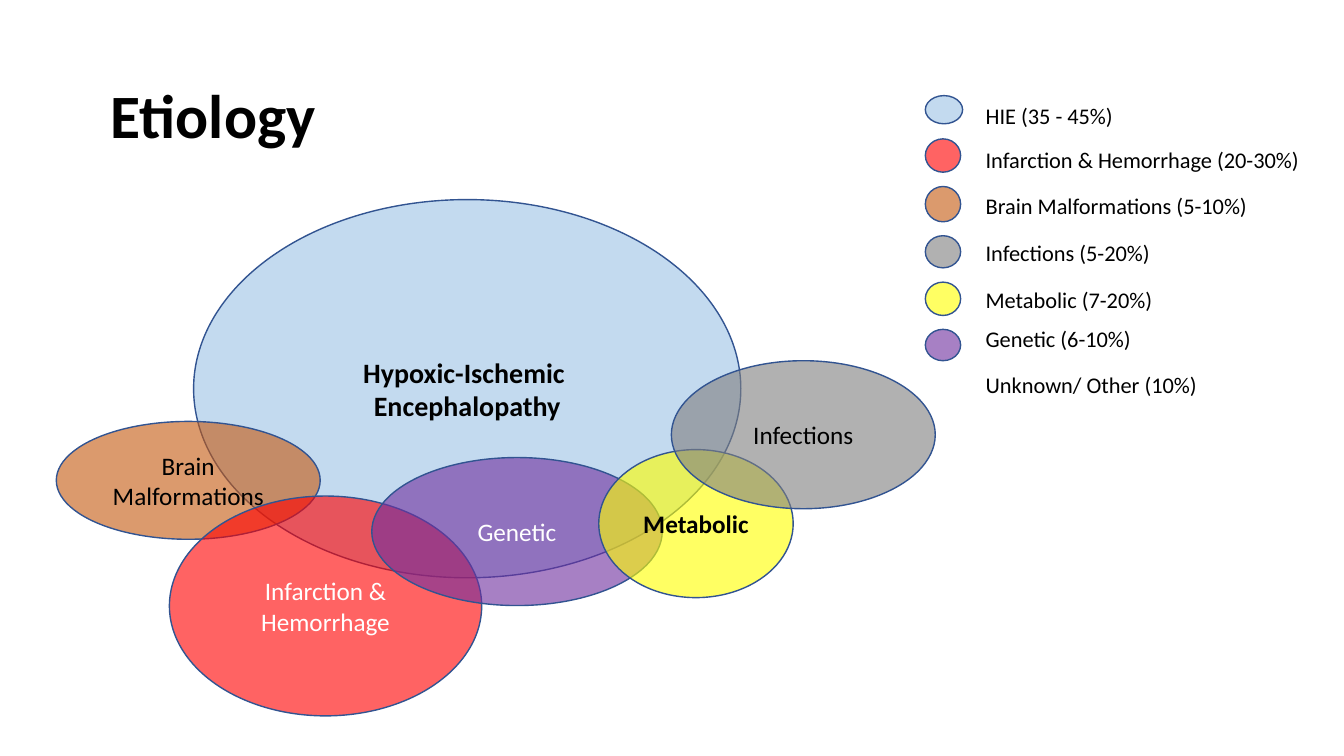
from lxml import etree
from pptx import Presentation
from pptx.dml.color import RGBColor
from pptx.enum.shapes import MSO_SHAPE
from pptx.enum.text import MSO_ANCHOR, PP_ALIGN
from pptx.oxml.ns import qn
from pptx.util import Cm, Pt

COLORS = {
    "hie": "9DC3E6",
    "infarction": "FF0000",
    "malformations": "C55A11",
    "infections": "808080",
    "metabolic": "FFFF00",
    "genetic": "7030A0",
    "outline": "325491",
    "black": "000000",
    "white": "FFFFFF",
}
OPACITY = 61

# Cause, (left, top, width, height) in cm within the diagram, lines, text format
CAUSES = [
    ("hie", (3.46, 0, 13.79, 9.53), ["Hypoxic-Ischemic ", "Encephalopathy"],
     {"size": 20, "bold": True}),
    ("malformations", (0, 5.59, 6.65, 2.97), ["Brain Malformations"], {}),
    ("infarction", (2.85, 7.47, 7.87, 5.54), ["Infarction & Hemorrhage"],
     {"color": "white"}),
    ("genetic", (7.95, 6.5, 7.32, 3.73), ["Genetic"], {"color": "white"}),
    ("metabolic", (13.67, 6.3, 4.9, 3.73), ["Metabolic"], {"bold": True}),
    ("infections", (15.5, 4.06, 6.65, 3.73), ["Infections"], {}),
]

# Label, its top, cause, top and (width, height) of its key, in cm within the legend
LEGEND = [
    ("HIE (35 - 45%)", 0.05, "hie", 0, (0.94, 0.71)),
    ("Infarction & Hemorrhage (20-30%)", 1.14, "infarction", 1.09, (0.89, 0.84)),
    ("Brain Malformations (5-10%)", 2.31, "malformations", 2.29, (0.89, 0.89)),
    ("Infections (5-20%)", 3.48, "infections", 3.53, (0.89, 0.81)),
    ("Metabolic (7-20%)", 4.67, "metabolic", 4.7, (0.89, 0.84)),
    ("Genetic (6-10%)", 5.66, "genetic", 5.89, (0.89, 0.79)),
    ("Unknown/ Other (10%)", 6.81, None, None, None),
]


def write(holder, lines, size=18, color="black", bold=False, align=PP_ALIGN.LEFT,
          anchor=MSO_ANCHOR.TOP, line_spacing=None):
    frame = holder.text_frame
    frame.word_wrap = True
    frame.vertical_anchor = anchor
    for index, line in enumerate(lines):
        paragraph = frame.add_paragraph() if index else frame.paragraphs[0]
        paragraph.alignment = align
        paragraph.line_spacing = line_spacing
        run = paragraph.add_run()
        run.text = line
        run.font.name = "Calibri"
        run.font.size = Pt(size)
        run.font.bold = bold
        run.font.color.rgb = RGBColor.from_string(COLORS[color])


def add_ellipse(slide, left, top, width, height, cause):
    ellipse = slide.shapes.add_shape(
        MSO_SHAPE.OVAL, Cm(left), Cm(top), Cm(width), Cm(height))
    ellipse.shadow.inherit = False
    ellipse.fill.solid()
    ellipse.fill.fore_color.rgb = RGBColor.from_string(COLORS[cause])
    ellipse.line.color.rgb = RGBColor.from_string(COLORS["outline"])
    ellipse.line.width = Pt(1)
    # Let overlapping causes show through
    fill_color = ellipse.fill._xPr.find(qn("a:solidFill"))[0]
    etree.SubElement(fill_color, qn("a:alpha"), val=str(OPACITY * 1000))
    return ellipse


def add_title(slide, left, top, width, height):
    title = slide.shapes.add_textbox(Cm(left), Cm(top), Cm(width), Cm(height))
    write(title, ["Etiology"], size=44, bold=True, anchor=MSO_ANCHOR.MIDDLE,
          line_spacing=0.9)


def add_diagram(slide, left, top):
    for cause, (x, y, width, height), lines, text_format in CAUSES:
        ellipse = add_ellipse(slide, left + x, top + y, width, height, cause)
        write(ellipse, lines, align=PP_ALIGN.CENTER, anchor=MSO_ANCHOR.MIDDLE,
              **text_format)


def add_legend(slide, left, top, width):
    label_indent = 1.27
    for text, label_top, cause, key_top, key_size in LEGEND:
        if cause:
            add_ellipse(slide, left, top + key_top, *key_size, cause)
        label = slide.shapes.add_textbox(
            Cm(left + label_indent), Cm(top + label_top),
            Cm(width - label_indent), Cm(0.94))
        write(label, [text], size=16)


def main():
    presentation = Presentation()
    presentation.slide_width = Cm(33.87)
    presentation.slide_height = Cm(19.05)
    slide = presentation.slides.add_slide(presentation.slide_layouts[6])
    add_title(slide, 2.54, 1.96, 6, 2.06)
    add_diagram(slide, 1.42, 5.03)
    add_legend(slide, 23.32, 2.41, 10.5)
    presentation.save("out.pptx")


if __name__ == "__main__":
    main()
